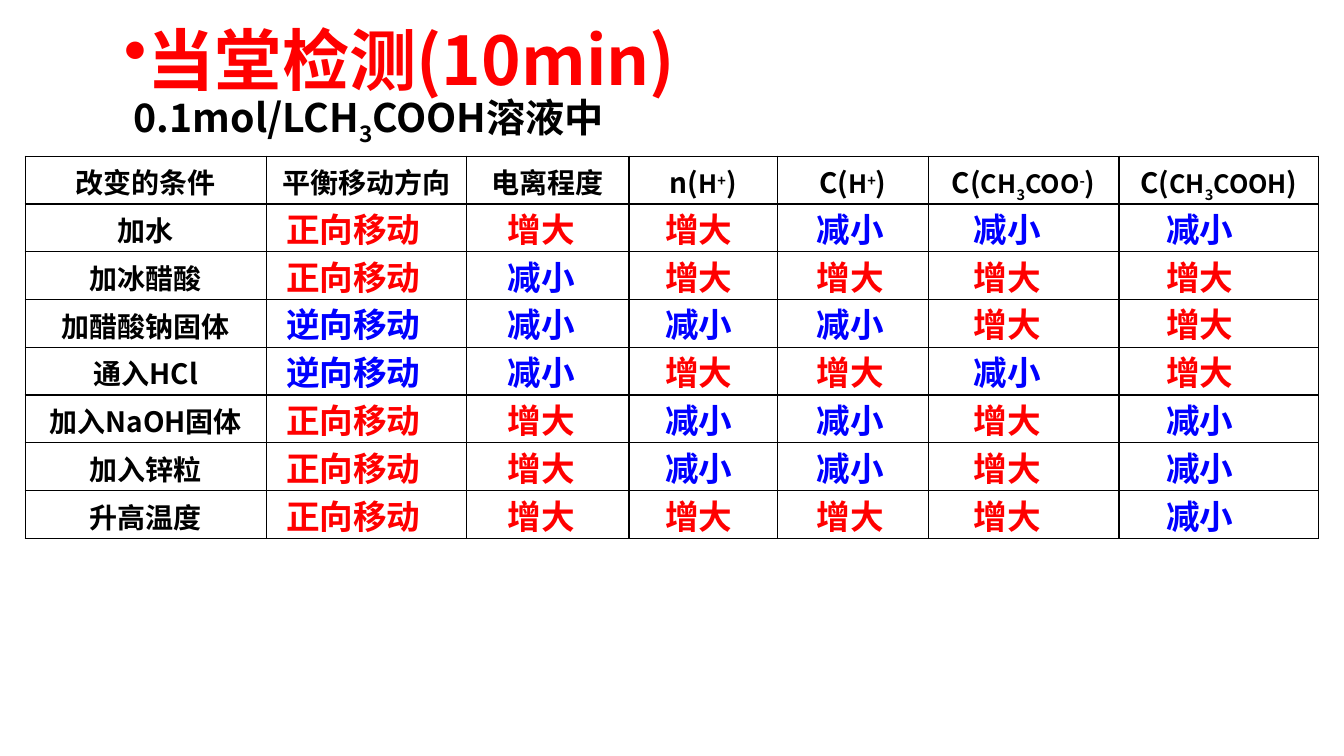
from pptx import Presentation
from pptx.dml.color import RGBColor
from pptx.enum.text import MSO_ANCHOR, MSO_AUTO_SIZE, PP_ALIGN
from pptx.oxml.ns import qn
from pptx.util import Inches, Pt
from lxml.etree import SubElement

COLORS = {"black": "000000", "white": "FFFFFF", "red": "FF0000", "blue": "0000FF"}
CJK, LATIN = "Noto Sans CJK SC", "Calibri"
SUB, SUPER = -25000, 30000

COL_WIDTHS = [2.39, 1.99, 1.61, 1.47, 1.5, 1.89, 1.98]
# A run is (text, size, baseline)
HEADERS = [
    [("改变的条件", 20, 0)],
    [("平衡移动方向", 20, 0)],
    [("电离程度", 20, 0)],
    [("n(", 20, 0), ("H", 18, 0), ("+", 18, SUPER), (")", 20, 0)],
    [("C(", 20, 0), ("H", 18, 0), ("+", 18, SUPER), (")", 20, 0)],
    [("C(", 20, 0), ("CH", 18, 0), ("3", 18, SUB), ("COO", 18, 0),
     ("-", 18, SUPER), (")", 20, 0)],
    [("C(", 20, 0), ("CH", 18, 0), ("3", 18, SUB), ("COOH", 18, 0), (")", 20, 0)],
]
CONDITIONS = ["加水", "加冰醋酸", "加醋酸钠固体", "通入HCl",
              "加入NaOH固体", "加入锌粒", "升高温度"]

ANSWER_LEFTS = [2.74, 4.94, 6.5, 8, 9.56, 11.47]
ANSWER_TOP, ANSWER_PITCH = 2.02, 0.475
ANSWERS = [
    "正向移动 增大 增大 减小 减小 减小",
    "正向移动 减小 增大 增大 增大 增大",
    "逆向移动 减小 减小 减小 增大 增大",
    "逆向移动 减小 增大 增大 减小 增大",
    "正向移动 增大 减小 减小 增大 减小",
    "正向移动 增大 减小 减小 增大 减小",
    "正向移动 增大 增大 增大 增大 减小",
]
ANSWER_COLORS = {"正向移动": "red", "增大": "red", "逆向移动": "blue", "减小": "blue"}


def add_runs(p, runs, color, font=CJK):
    for text, size, baseline in runs:
        r = p.add_run()
        r.text = text
        r.font.size, r.font.bold, r.font.name = Pt(size), True, font
        r.font.color.rgb = RGBColor.from_string(COLORS[color])
        if font == CJK:
            SubElement(r.font._element, qn("a:ea"), typeface=font)
        if baseline:
            r.font._element.set("baseline", str(baseline))


def add_text(s, box, runs, color, font=CJK):
    """Add a one-paragraph text box and return its paragraph."""
    tf = s.shapes.add_textbox(*map(Inches, box)).text_frame
    tf.word_wrap = True
    tf.auto_size = MSO_AUTO_SIZE.SHAPE_TO_FIT_TEXT
    tf.vertical_anchor = MSO_ANCHOR.MIDDLE
    p = tf.paragraphs[0]
    add_runs(p, runs, color, font)
    return p


def add_title(s, box):
    p = add_text(s, box, [("当堂检测(10min)", 48, 0)], "red")
    SubElement(p._p.get_or_add_pPr(), qn("a:buChar"), char="•")


def add_subtitle(s, box):
    add_text(s, box, [("0.1mol/LCH", 28, 0), ("3", 28, SUB), ("COOH溶液中", 28, 0)],
             "black")


def style_cell(cell):
    """Give a cell black borders, a white fill and tight margins."""
    tc_pr = cell._tc.get_or_add_tcPr()
    for side in ("lnL", "lnR", "lnT", "lnB"):
        ln = SubElement(tc_pr, qn(f"a:{side}"), w=str(Pt(1)))
        SubElement(SubElement(ln, qn("a:solidFill")), qn("a:srgbClr"),
                   val=COLORS["black"])
    cell.fill.solid()
    cell.fill.fore_color.rgb = RGBColor.from_string(COLORS["white"])
    cell.margin_top, cell.margin_bottom = Inches(0.05), 0


def add_condition_table(s, box):
    rows = [HEADERS] + [[[(name, 20, 0)]] for name in CONDITIONS]
    table = s.shapes.add_table(len(rows), len(COL_WIDTHS), *map(Inches, box)).table
    for col, width in zip(table.columns, COL_WIDTHS):
        col.width = Inches(width)
    for row in table.rows:
        row.height = Inches(box[3] / len(rows))
    for cell in table.iter_cells():
        style_cell(cell)
    for i, row in enumerate(rows):
        for j, runs in enumerate(row):
            p = table.cell(i, j).text_frame.paragraphs[0]
            p.alignment = PP_ALIGN.CENTER
            add_runs(p, runs, "black")


def add_answers(s):
    for i, row in enumerate(ANSWERS):
        for left, answer in zip(ANSWER_LEFTS, row.split()):
            box = (left, ANSWER_TOP + i * ANSWER_PITCH, 2.73, 0.5)
            add_text(s, box, [(answer, 24, 0)], ANSWER_COLORS[answer], LATIN)


def main():
    prs = Presentation()
    prs.slide_width, prs.slide_height = Inches(13.33), Inches(7.5)
    s = prs.slides.add_slide(prs.slide_layouts[6])
    add_subtitle(s, (1.23, 0.91, 5.62, 0.57))
    add_condition_table(s, (0.25, 1.55, 12.82, 3.79))
    add_answers(s)
    add_title(s, (1.13, 0.13, 6.77, 0.91))
    prs.save("out.pptx")


if __name__ == "__main__":
    main()
